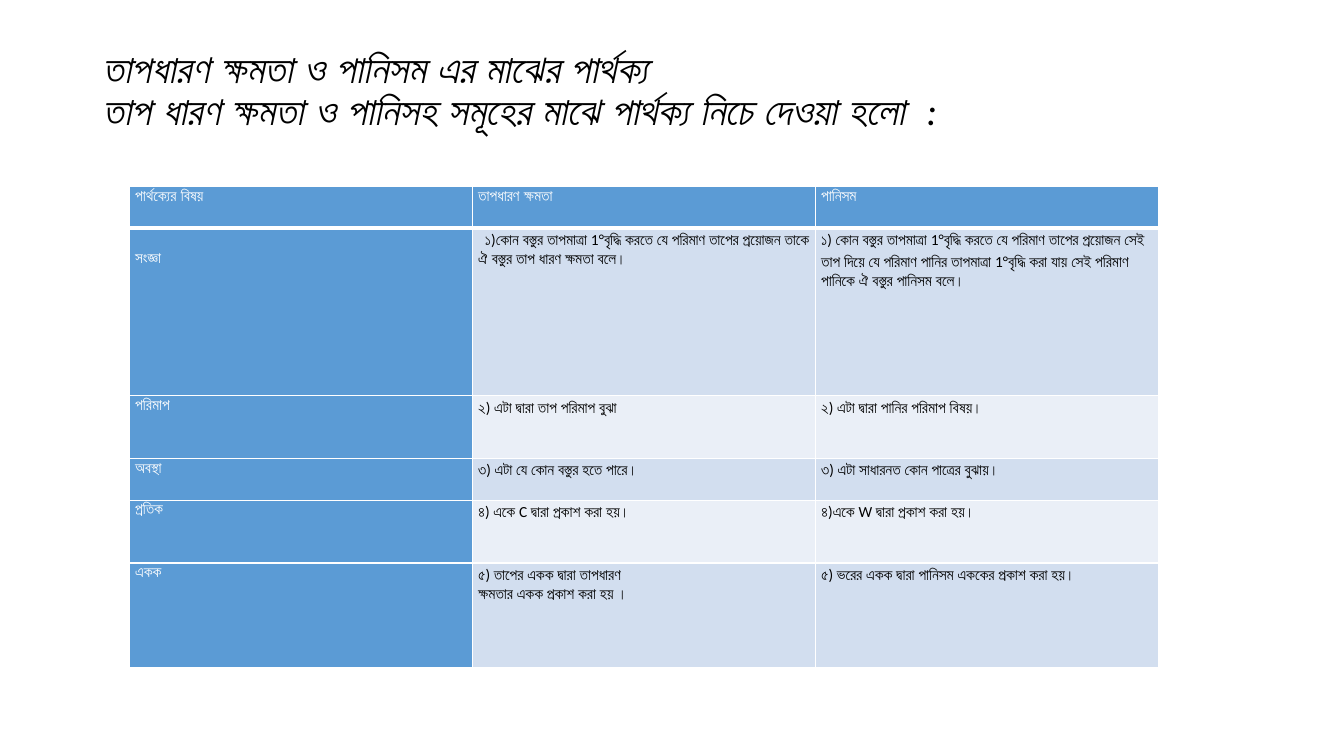
import pptx
import pptx.util
import pptx.dml.color
import pptx.enum.text
import lxml.etree

THEME = {
    "font": "Calibri", "title size": 28, "cell size": 11,
    "black": "000000", "white": "FFFFFF", "blue": "5B9BD5",
    "bands": ("D2DEEF", "EAEFF7"),
}
UNIT = 1 / 12  # the slide is a grid of 160 columns by 90 rows


def grid(count):
    return pptx.util.Inches(count * UNIT)


def format_paragraph(paragraph, size, color, spacing, bold=False, italic=False):
    paragraph.line_spacing = spacing
    for run in paragraph.runs:
        run.font.name = THEME["font"]
        run.font.size = pptx.util.Pt(size)
        run.font.bold = bold
        run.font.italic = italic
        run.font.color.rgb = pptx.dml.color.RGBColor.from_string(THEME[color])


presentation = pptx.Presentation()
presentation.slide_width = grid(160)
presentation.slide_height = grid(90)
slide = presentation.slides.add_slide(presentation.slide_layouts[5])

# Title
title = slide.shapes.title
title.left, title.top, title.width, title.height = map(grid, (11, 4.8, 138, 17.4))
title_frame = title.text_frame
title_frame.text = (
    "তাপধারণ ক্ষমতা ও পানিসম এর মাঝের পার্থক্য\v"
    "তাপ ধারণ ক্ষমতা ও পানিসহ সমূহের মাঝে পার্থক্য নিচে দেওয়া হলো  :"
)
title_frame.word_wrap = True
title_frame.auto_size = pptx.enum.text.MSO_AUTO_SIZE.NONE
title_frame.vertical_anchor = pptx.enum.text.MSO_ANCHOR.TOP
title_frame.margin_top = grid(1.1)
title_frame.paragraphs[0].alignment = pptx.enum.text.PP_ALIGN.LEFT
format_paragraph(title_frame.paragraphs[0], THEME["title size"], "black", 0.9, italic=True)

# Comparison table: row height in text lines, then the three cells
comparison = [
    (2, "পার্থক্যের বিষয়", "তাপধারণ ক্ষমতা", "পানিসম"),
    (8, "সংজ্ঞা",
     "১)কোন বস্তুর তাপমাত্রা 1°বৃদ্ধি করতে যে পরিমাণ তাপের প্রয়োজন "
     "তাকে ঐ বস্তুর তাপ ধারণ ক্ষমতা বলে।",
     "১) কোন বস্তুর তাপমাত্রা 1°বৃদ্ধি করতে যে পরিমাণ তাপের প্রয়োজন সেই "
     "তাপ দিয়ে যে পরিমাণ পানির তাপমাত্রা 1°বৃদ্ধি করা যায় সেই পরিমাণ "
     "পানিকে ঐ বস্তুর পানিসম বলে।"),
    (3, "পরিমাপ", "২) এটা দ্বারা তাপ পরিমাপ বুঝা", "২) এটা দ্বারা পানির পরিমাপ বিষয়।"),
    (2, "অবস্থা", "৩) এটা যে কোন বস্তুর হতে পারে।", "৩) এটা সাধারনত কোন পাত্রের বুঝায়।"),
    (3, "প্রতিক", "৪) একে C দ্বারা প্রকাশ করা হয়।", "৪)একে W দ্বারা প্রকাশ করা হয়।"),
    (5, "একক", "৫) তাপের একক দ্বারা তাপধারণ\nক্ষমতার একক প্রকাশ করা হয় ।",
     "৫) ভরের একক দ্বারা পানিসম এককের প্রকাশ করা হয়।"),
]
TEXT_LINE = 2.49
table_height = TEXT_LINE * sum(row[0] for row in comparison)
table = slide.shapes.add_table(
    len(comparison), 3, grid(15.4), grid(22.2), grid(122.5), grid(table_height)).table
for column in table.columns:
    column.width = grid(122.5 / 3)

for row_index, (line_count, *texts) in enumerate(comparison):
    table.rows[row_index].height = grid(TEXT_LINE * line_count)
    for column_index, text in enumerate(texts):
        cell = table.cell(row_index, column_index)
        is_heading = row_index == 0 or column_index == 0
        cell.margin_left = cell.margin_right = grid(0.7)
        cell.margin_top = cell.margin_bottom = 0
        cell.text_frame.text = text
        for paragraph in cell.text_frame.paragraphs:
            format_paragraph(paragraph, THEME["cell size"],
                             "white" if is_heading else "black", 1.15, bold=is_heading)

        # White borders, thicker under the header row
        properties = cell._tc.get_or_add_tcPr()
        for side in "LRTB":
            under_header = (row_index, side) in ((0, "B"), (1, "T"))
            border = lxml.etree.SubElement(
                properties, pptx.oxml.ns.qn("a:ln" + side),
                w=str(pptx.util.Pt(3 if under_header else 1)))
            border_fill = lxml.etree.SubElement(border, pptx.oxml.ns.qn("a:solidFill"))
            lxml.etree.SubElement(
                border_fill, pptx.oxml.ns.qn("a:srgbClr"), val=THEME["white"])

        cell.fill.solid()
        cell.fill.fore_color.rgb = pptx.dml.color.RGBColor.from_string(
            THEME["blue"] if is_heading else THEME["bands"][(row_index - 1) % 2])

# The definition row: label one line down, first sentence indented
table.cell(1, 0).margin_top = grid(TEXT_LINE)
definition = table.cell(1, 1).text_frame.paragraphs[0]
definition._p.get_or_add_pPr().set("indent", str(grid(0.8)))

presentation.save("out.pptx")
